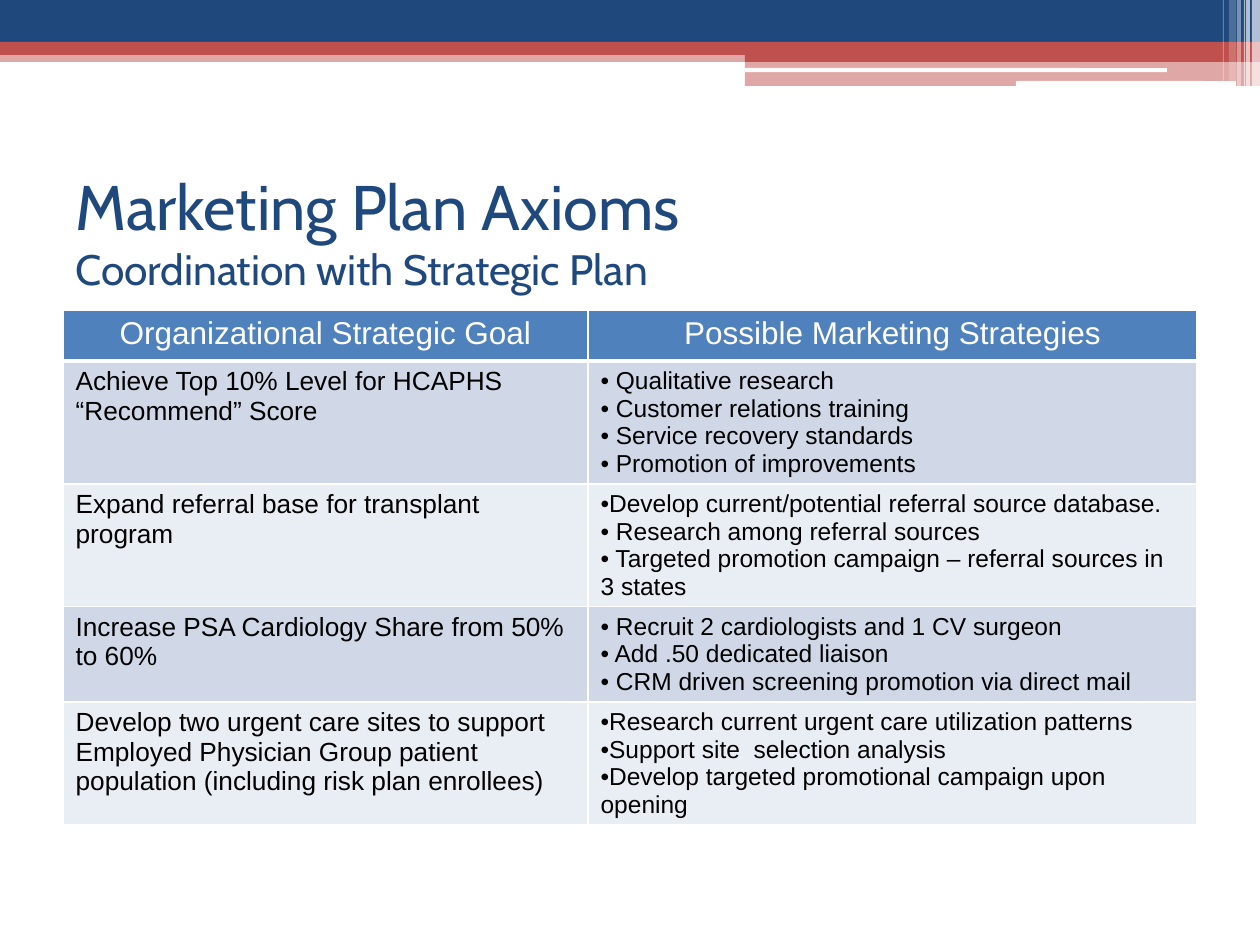
from dataclasses import dataclass

import pptx
import pptx.dml.color
import pptx.enum.shapes
import pptx.enum.text
import pptx.oxml
import pptx.oxml.ns
import pptx.util
from lxml import etree

PX = 914400 // 126  # one px in EMU
qn = pptx.oxml.ns.qn


@dataclass(frozen=True)
class Theme:
    navy: str = "1F497D"
    red: str = "C0504D"
    white: str = "FFFFFF"
    black: str = "000000"
    header: str = "4F81BD"
    bands: tuple = ("D0D8E8", "E9EDF4")
    title_font: str = "Cabin"
    body_font: str = "Arial"
    title_size: float = 36
    subtitle_size: float = 24.3
    header_size: float = 18
    goal_size: float = 15
    strategy_size: float = 14


class SlideBuilder:
    def __init__(self, slide, theme):
        self.slide = slide
        self.theme = theme

    def add_run(self, paragraph, text, size, color, font):
        run = paragraph.add_run()
        run.text = text
        run.font.size = pptx.util.Pt(size)
        run.font.name = font
        run.font.bold = False
        run.font.color.rgb = pptx.dml.color.RGBColor.from_string(color)

    def bar(self, box, color, opacity=100, rounded=False):
        kinds = pptx.enum.shapes.MSO_SHAPE
        kind = kinds.ROUNDED_RECTANGLE if rounded else kinds.RECTANGLE
        bar = self.slide.shapes.add_shape(kind, *(n * PX for n in box))
        bar.shadow.inherit = False
        bar.line.fill.background()
        bar.fill.solid()
        bar.fill.fore_color.rgb = pptx.dml.color.RGBColor.from_string(color)
        if opacity < 100:
            rgb = next(bar.element.spPr.iter(qn("a:srgbClr")))
            etree.SubElement(rgb, qn("a:alpha"), val=str(opacity * 1000))

    def title(self, box, heading, subheading):
        theme = self.theme
        title = self.slide.shapes.title
        title.left, title.top, title.width, title.height = (n * PX for n in box)
        frame = title.text_frame
        frame.auto_size = pptx.enum.text.MSO_AUTO_SIZE.NONE
        frame.vertical_anchor = pptx.enum.text.MSO_ANCHOR.MIDDLE
        lines = frame.paragraphs[0]
        lines.alignment = pptx.enum.text.PP_ALIGN.LEFT
        self.add_run(lines, heading, theme.title_size, theme.navy, theme.title_font)
        lines.add_line_break()
        # The break takes the heading's size so it does not stretch the line
        line_break = lines._p.find(qn("a:br"))
        etree.SubElement(line_break, qn("a:rPr"), sz=str(theme.title_size * 100))
        self.add_run(lines, subheading, theme.subtitle_size, theme.navy, theme.title_font)

    def cell(self, cell, lines, fill, size, color, bulleted=False, centered=False, bottom=1):
        properties = cell._tc.get_or_add_tcPr()
        for side, width in (("L", 1), ("R", 1), ("T", 1), ("B", bottom)):
            border = etree.SubElement(properties, qn(f"a:ln{side}"), w=str(pptx.util.Pt(width)))
            paint = etree.SubElement(border, qn("a:solidFill"))
            etree.SubElement(paint, qn("a:srgbClr"), val=self.theme.white)
        cell.fill.solid()
        cell.fill.fore_color.rgb = pptx.dml.color.RGBColor.from_string(fill)
        frame = cell.text_frame
        for index, line in enumerate(lines):
            paragraph = frame.add_paragraph() if index else frame.paragraphs[0]
            if centered:
                paragraph.alignment = pptx.enum.text.PP_ALIGN.CENTER
            if bulleted:
                style = paragraph._p.get_or_add_pPr()
                style.set("marL", "0")
                style.set("indent", "0")
                etree.SubElement(style, qn("a:buFont"), typeface=self.theme.body_font)
                etree.SubElement(style, qn("a:buChar"), char="•")
            self.add_run(paragraph, line, size, color, self.theme.body_font)

    def table(self, left, top, widths, heights, headings, plan):
        theme = self.theme
        table = self.slide.shapes.add_table(
            len(heights), len(widths), left * PX, top * PX,
            sum(widths) * PX, sum(heights) * PX).table
        table.horz_banding = False
        for column, width in zip(table.columns, widths):
            column.width = width * PX
        for row, height in zip(table.rows, heights):
            row.height = height * PX
        for column, heading in enumerate(headings):
            self.cell(table.cell(0, column), [heading], theme.header, theme.header_size,
                      theme.white, centered=True, bottom=3)
        for row, (goal, strategies) in enumerate(plan, start=1):
            band = theme.bands[(row - 1) % 2]
            self.cell(table.cell(row, 0), [goal], band, theme.goal_size, theme.black)
            self.cell(table.cell(row, 1), strategies, band, theme.strategy_size,
                      theme.black, bulleted=True)


HEADINGS = ["Organizational Strategic Goal", "Possible Marketing Strategies"]
PLAN = [
    ("Achieve Top 10% Level for HCAPHS “Recommend” Score",
     [" Qualitative research", " Customer relations training",
      " Service recovery standards", " Promotion of improvements"]),
    ("Expand referral base for transplant program",
     ["Develop current/potential referral source database.",
      " Research among referral sources",
      " Targeted promotion campaign – referral sources in 3 states"]),
    ("Increase PSA Cardiology Share from 50% to 60%",
     [" Recruit 2 cardiologists and 1 CV surgeon", " Add .50 dedicated liaison",
      " CRM driven screening promotion via direct mail"]),
    ("Develop two urgent care sites to support Employed Physician Group patient "
     "population (including risk plan enrollees)",
     ["Research current urgent care utilization patterns",
      "Support site  selection analysis",
      "Develop targeted promotional campaign upon opening"]),
]


def main():
    theme = Theme()
    deck = pptx.Presentation()
    deck.slide_width, deck.slide_height = 1260 * PX, 945 * PX
    builder = SlideBuilder(deck.slides.add_slide(deck.slide_layouts[5]), theme)

    # Banner bands
    builder.bar((0, 50, 1260, 12), theme.red, 50)
    builder.bar((0, 0, 1260, 43), theme.navy)
    builder.bar((0, 42, 1260, 13), theme.red)
    builder.bar((745, 49, 515, 13), theme.red)
    builder.bar((745, 61, 515, 25), theme.red, 50)
    builder.bar((745, 68, 422, 4), theme.white, rounded=True)
    builder.bar((1016, 81, 220, 5), theme.white, rounded=True)

    # Translucent stripes at the right edge: left, width, height, opacity
    for left, width, height, opacity in (
            (1252, 8, 86, 65), (1246, 4, 86, 65), (1244, 1, 86, 60),
            (1237, 4, 86, 40), (1229, 7, 81, 20), (1223, 1, 81, 30)):
        builder.bar((left, 0, width, height), theme.white, opacity)

    # Title and plan table
    builder.title((63, 157, 1134, 148), "Marketing Plan Axioms", "Coordination with Strategic Plan")
    builder.table(63, 310, (525, 609), (51, 123, 122, 95, 122), HEADINGS, PLAN)

    deck.save("out.pptx")


if __name__ == "__main__":
    main()
